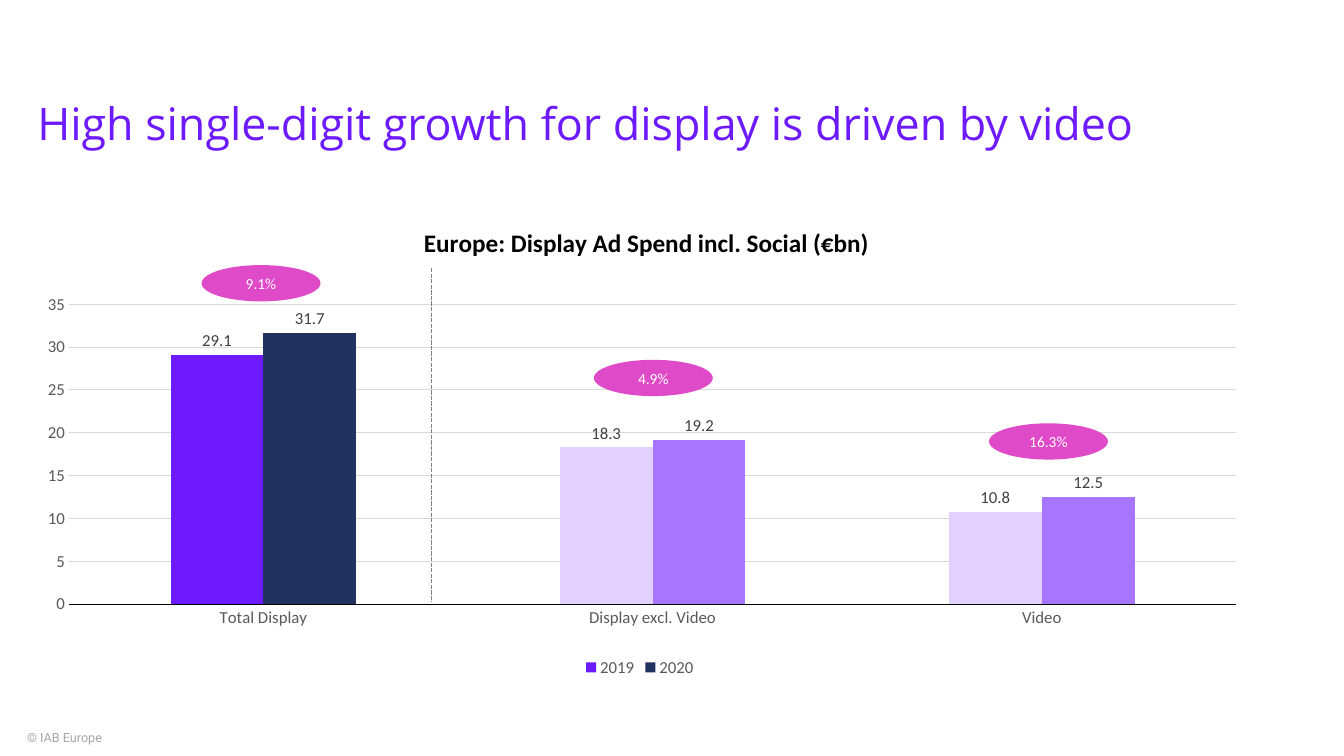
"""Build a slide comparing display advertising spend in 2019 and 2020."""
from dataclasses import dataclass

import pptx
import pptx.chart.data
import pptx.dml.color
import pptx.enum.chart
import pptx.enum.dml
import pptx.enum.shapes
import pptx.enum.text
import pptx.oxml
import pptx.oxml.ns
import pptx.util

RGBColor = pptx.dml.color.RGBColor
VIOLET = RGBColor(0x6D, 0x1A, 0xFE)
NAVY = RGBColor(0x21, 0x32, 0x5E)
PALE_VIOLET = RGBColor(0xE2, 0xD1, 0xFF)
MID_VIOLET = RGBColor(0xA6, 0x76, 0xFF)
PINK = RGBColor(0xDE, 0x4A, 0xC7)
WHITE = RGBColor(0xFF, 0xFF, 0xFF)
BLACK = RGBColor(0x00, 0x00, 0x00)
AXIS_GREY = RGBColor(0x59, 0x59, 0x59)
LABEL_GREY = RGBColor(0x40, 0x40, 0x40)
GRID_GREY = RGBColor(0xD9, 0xD9, 0xD9)
DIVIDER_GREY = RGBColor(0x80, 0x80, 0x80)
FOOTER_GREY = RGBColor(0xA6, 0xA6, 0xA6)

WIDTH = pptx.util.Inches(13.33)
HEIGHT = pptx.util.Inches(7.5)


@dataclass(frozen=True)
class Area:
    """A rectangle given in percent of the slide's width and height."""
    left: float
    top: float
    width: float
    height: float

    def lengths(self) -> tuple[int, int, int, int]:
        """Return left, top, width and height as slide lengths."""
        return (across(self.left), down(self.top),
                across(self.width), down(self.height))


@dataclass(frozen=True)
class YearSeries:
    """One year's spend, with the colours of the total and of its parts."""
    year: str
    spend: tuple[float, ...]
    total_color: RGBColor
    part_color: RGBColor


@dataclass(frozen=True)
class GrowthBubble:
    """A growth rate and the top left corner of its ellipse in percent."""
    rate: str
    left: float
    top: float


TITLE_AREA = Area(2.03, 9.87, 91.15, 13.47)
CHART_AREA = Area(2.03, 26.67, 91.15, 63.47)
FOOTER_AREA = Area(1.28, 95.87, 27.08, 3.33)
BUBBLE_WIDTH, BUBBLE_HEIGHT = 8.85, 4.8
DIVIDER_LEFT, DIVIDER_TOP, DIVIDER_BOTTOM = 32.11, 35.47, 79.6

CATEGORIES = ("Total Display", "Display excl. Video", "Video")
YEARS = (
    YearSeries("2019", (29.1, 18.3, 10.8), VIOLET, PALE_VIOLET),
    YearSeries("2020", (31.7, 19.2, 12.5), NAVY, MID_VIOLET),
)
BUBBLES = (
    GrowthBubble("9.1%", 15, 35.07),
    GrowthBubble("4.9%", 44.19, 47.6),
    GrowthBubble("16.3%", 73.59, 56),
)


def across(percent: float) -> int:
    """Turn a percentage of the slide's width into a length."""
    return round(WIDTH * percent / 100)


def down(percent: float) -> int:
    """Turn a percentage of the slide's height into a length."""
    return round(HEIGHT * percent / 100)


def set_font(font, name: str, size: float, color: RGBColor, bold: bool = False) -> None:
    """Set the face, size, colour and weight of a font."""
    font.name = name
    font.size = pptx.util.Pt(size)
    font.bold = bold
    font.color.rgb = color


def place(shape, area: Area) -> None:
    """Move a shape onto an area."""
    shape.left, shape.top, shape.width, shape.height = area.lengths()


def set_layout(element, **shares: float) -> None:
    """Give a chart part a manual layout in shares of the chart's size."""
    modes = '<c:layoutTarget val="inner"/>' if "w" in shares else ""
    modes += '<c:xMode val="edge"/><c:yMode val="edge"/>'
    values = "".join(f'<c:{key} val="{share}"/>' for key, share in shares.items())
    layout = pptx.oxml.parse_xml(
        f'<c:layout {pptx.oxml.ns.nsdecls("c")}>'
        f'<c:manualLayout>{modes}{values}</c:manualLayout></c:layout>')
    for old in element.findall(pptx.oxml.ns.qn("c:layout")):
        element.remove(old)
    text = element.find(pptx.oxml.ns.qn("c:tx"))
    element.insert(0 if text is None else 1, layout)


def add_title(page) -> None:
    """Write the headline into the title placeholder."""
    title = page.shapes.title
    place(title, TITLE_AREA)
    frame = title.text_frame
    frame.text = "High single-digit growth for display is driven by video"
    frame.auto_size = pptx.enum.text.MSO_AUTO_SIZE.NONE
    frame.vertical_anchor = pptx.enum.text.MSO_ANCHOR.MIDDLE
    para = frame.paragraphs[0]
    para.alignment = pptx.enum.text.PP_ALIGN.LEFT
    para.line_spacing = 0.9
    set_font(para.font, "Open Sans", 32, VIOLET)


def add_footer(page) -> None:
    """Write the copyright line."""
    frame = page.shapes.add_textbox(*FOOTER_AREA.lengths()).text_frame
    frame.word_wrap = True
    frame.text = "© IAB Europe"
    set_font(frame.paragraphs[0].font, "Roboto", 9, FOOTER_GREY)


def style_axes(chart) -> None:
    """Format both axes and the gridlines."""
    for axis in (chart.category_axis, chart.value_axis):
        axis.major_tick_mark = pptx.enum.chart.XL_TICK_MARK.NONE
        axis.minor_tick_mark = pptx.enum.chart.XL_TICK_MARK.NONE
        set_font(axis.tick_labels.font, "Calibri", 12, AXIS_GREY)
    chart.category_axis.format.line.color.rgb = BLACK
    chart.category_axis.format.line.width = pptx.util.Pt(0.75)
    spend_axis = chart.value_axis
    spend_axis.minimum_scale, spend_axis.maximum_scale = 0, 35
    spend_axis.major_unit = 5
    spend_axis.format.line.fill.background()
    grid_line = spend_axis.major_gridlines.format.line
    grid_line.color.rgb = GRID_GREY
    grid_line.width = pptx.util.Pt(0.75)


def style_series(series, year: YearSeries) -> None:
    """Colour one year's columns and label them with their values."""
    series.format.fill.solid()
    series.format.fill.fore_color.rgb = year.total_color
    for index in range(1, len(CATEGORIES)):
        fill = series.points[index].format.fill
        fill.solid()
        fill.fore_color.rgb = year.part_color
    labels = series.data_labels
    labels.show_value = True
    labels.number_format = "#,##0.0"
    labels.number_format_is_linked = False
    labels.position = pptx.enum.chart.XL_LABEL_POSITION.OUTSIDE_END
    set_font(labels.font, "Calibri", 12, LABEL_GREY)


def add_spend_chart(page) -> None:
    """Draw the clustered columns of spend per category and year."""
    spend_data = pptx.chart.data.CategoryChartData()
    spend_data.categories = CATEGORIES
    for year in YEARS:
        spend_data.add_series(year.year, year.spend)
    chart = page.shapes.add_chart(
        pptx.enum.chart.XL_CHART_TYPE.COLUMN_CLUSTERED,
        *CHART_AREA.lengths(), spend_data).chart
    set_font(chart.font, "Calibri", 12, BLACK)

    chart.has_title = True
    chart.chart_title.include_in_layout = False
    title_frame = chart.chart_title.text_frame
    title_frame.text = "Europe: Display Ad Spend incl. Social (€bn)"
    set_font(title_frame.paragraphs[0].font, "Calibri", 18, BLACK, bold=True)
    chart_element = chart.element.chart
    set_layout(chart_element.find(pptx.oxml.ns.qn("c:title")), x=0.32, y=0.04)
    set_layout(chart_element.plotArea, x=0.034, y=0.214, w=0.953, h=0.625)

    chart.has_legend = True
    chart.legend.position = pptx.enum.chart.XL_LEGEND_POSITION.BOTTOM
    chart.legend.include_in_layout = False
    set_font(chart.legend.font, "Calibri", 12, AXIS_GREY)

    plot = chart.plots[0]
    plot.vary_by_categories = False
    plot.gap_width, plot.overlap = 219, 0
    style_axes(chart)
    for series, year in zip(plot.series, YEARS):
        style_series(series, year)


def add_bubble(page, bubble: GrowthBubble) -> None:
    """Draw one ellipse with a growth rate."""
    area = Area(bubble.left, bubble.top, BUBBLE_WIDTH, BUBBLE_HEIGHT)
    ellipse = page.shapes.add_shape(
        pptx.enum.shapes.MSO_SHAPE.OVAL, *area.lengths())
    ellipse.shadow.inherit = False
    ellipse.fill.solid()
    ellipse.fill.fore_color.rgb = PINK
    ellipse.line.fill.background()
    frame = ellipse.text_frame
    frame.text = bubble.rate
    frame.vertical_anchor = pptx.enum.text.MSO_ANCHOR.MIDDLE
    para = frame.paragraphs[0]
    para.alignment = pptx.enum.text.PP_ALIGN.CENTER
    set_font(para.font, "Calibri", 11, WHITE)


def add_divider(page) -> None:
    """Draw the dashed line between the total and its parts."""
    left = across(DIVIDER_LEFT)
    divider = page.shapes.add_connector(
        pptx.enum.shapes.MSO_CONNECTOR.STRAIGHT,
        left, down(DIVIDER_TOP), left, down(DIVIDER_BOTTOM))
    divider.line.color.rgb = DIVIDER_GREY
    divider.line.width = pptx.util.Pt(1)
    divider.line.dash_style = pptx.enum.dml.MSO_LINE.SQUARE_DOT
    divider.element.spPr.append(pptx.oxml.parse_xml(
        f'<a:effectLst {pptx.oxml.ns.nsdecls("a")}/>'))


def main() -> None:
    """Build and save the deck."""
    deck = pptx.Presentation()
    deck.slide_width, deck.slide_height = WIDTH, HEIGHT
    page = deck.slides.add_slide(deck.slide_layouts.get_by_name("Title Only"))
    add_footer(page)
    add_title(page)
    add_spend_chart(page)
    for bubble in BUBBLES:
        add_bubble(page, bubble)
    add_divider(page)
    deck.save("out.pptx")


if __name__ == "__main__":
    main()
